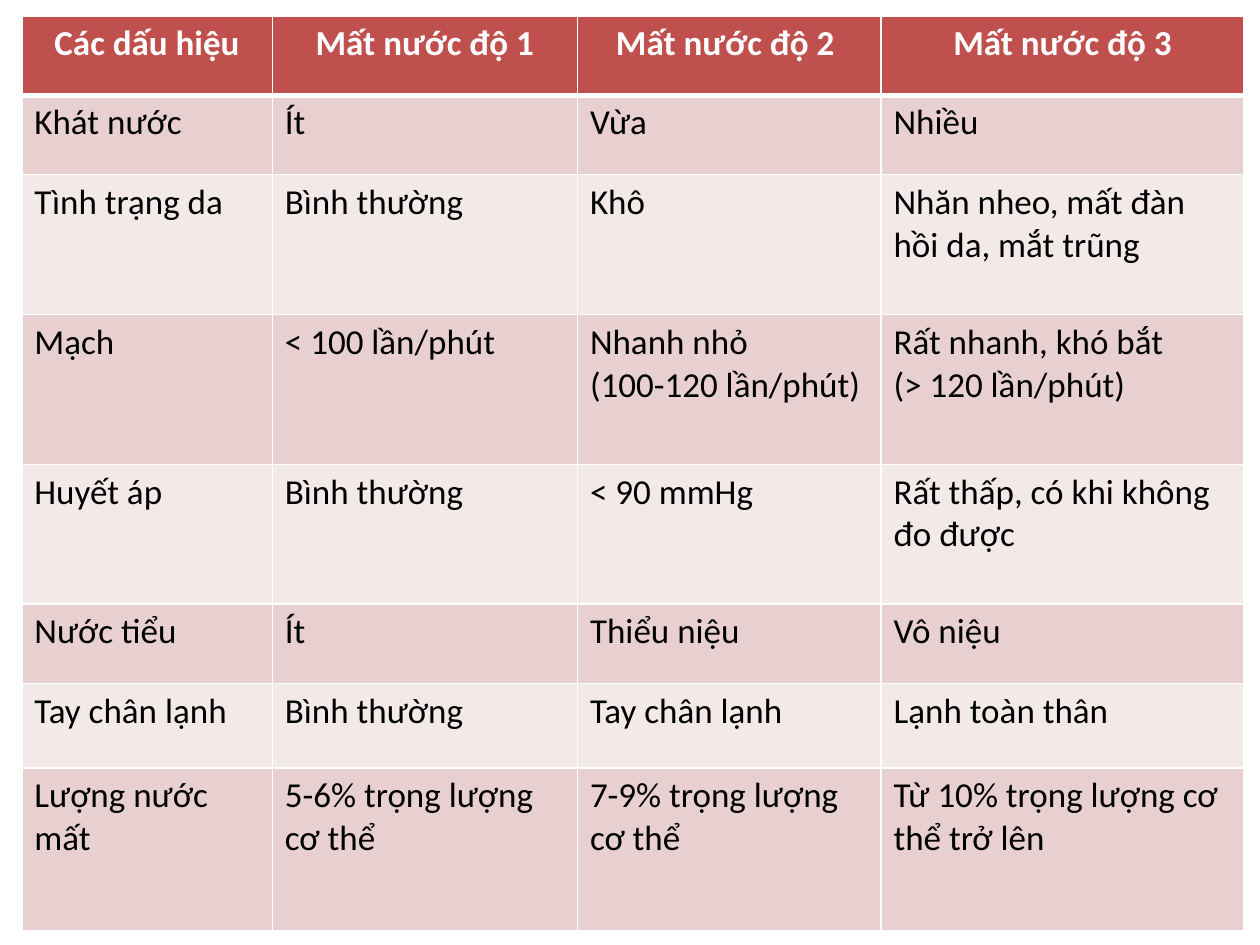
from pptx import Presentation
from pptx.dml.color import RGBColor
from pptx.enum.text import PP_ALIGN
from pptx.oxml.ns import qn
from pptx.util import Cm, Pt
from lxml.etree import SubElement

WHITE = RGBColor(0xFF, 0xFF, 0xFF)
BLACK = RGBColor(0x00, 0x00, 0x00)
HEADER_RED = RGBColor(0xC0, 0x50, 0x4D)
BANDS = (RGBColor(0xF4, 0xE9, 0xE9), RGBColor(0xE8, 0xD0, 0xD0))

COLUMN_WIDTHS = (5.05, 6.15, 6.12, 7.32)
ROW_HEIGHTS = (1.6, 1.6, 2.82, 3.02, 2.82, 1.6, 1.7, 3.28)
SIGNS = (
    ("Các dấu hiệu", "Mất nước độ 1", "Mất nước độ 2 ", "Mất nước độ 3"),
    ("Khát nước", "Ít", "Vừa", "Nhiều"),
    ("Tình trạng da", "Bình thường", "Khô", "Nhăn nheo, mất đàn hồi da, mắt trũng"),
    ("Mạch", "< 100 lần/phút", "Nhanh nhỏ\n(100-120 lần/phút)",
     "Rất nhanh, khó bắt\n(> 120 lần/phút)"),
    ("Huyết áp", "Bình thường", "< 90 mmHg", "Rất thấp, có khi không đo được"),
    ("Nước tiểu", "Ít", "Thiểu niệu", "Vô niệu"),
    ("Tay chân lạnh", "Bình thường", "Tay chân lạnh", "Lạnh toàn thân"),
    ("Lượng nước mất", "5-6% trọng lượng\ncơ thể", "7-9% trọng lượng\ncơ thể",
     "Từ 10% trọng lượng cơ thể trở lên"),
)


def set_borders(cell, top, bottom):
    """Draw white cell borders; side lines are always 1 pt."""
    properties = cell._tc.get_or_add_tcPr()
    for side, width in (("L", 1), ("R", 1), ("T", top), ("B", bottom)):
        line = SubElement(properties, qn(f"a:ln{side}"), w=str(Pt(width)))
        fill = SubElement(line, qn("a:solidFill"))
        SubElement(fill, qn("a:srgbClr"), val=str(WHITE))


def format_cell(cell, text, row):
    is_header = row == 0
    # The rule under the header is shared by the first two rows
    set_borders(cell, top=3 if row == 1 else 1, bottom=3 if is_header else 1)
    cell.fill.solid()
    cell.fill.fore_color.rgb = HEADER_RED if is_header else BANDS[row % 2]

    cell.text = text
    for para in cell.text_frame.paragraphs:
        para.alignment = PP_ALIGN.CENTER if is_header else PP_ALIGN.LEFT
        para.font.name = "Calibri"
        para.font.size = Pt(20)
        para.font.bold = is_header
        para.font.color.rgb = WHITE if is_header else BLACK


def add_signs_table(page, left, top):
    """Place the dehydration table with its top left corner at the given point."""
    frame = page.shapes.add_table(
        len(ROW_HEIGHTS), len(COLUMN_WIDTHS), left, top,
        Cm(sum(COLUMN_WIDTHS)), Cm(sum(ROW_HEIGHTS)))
    table = frame.table
    for column, width in zip(table.columns, COLUMN_WIDTHS):
        column.width = Cm(width)
    for row, height in zip(table.rows, ROW_HEIGHTS):
        row.height = Cm(height)
    for row, texts in enumerate(SIGNS):
        for column, text in enumerate(texts):
            format_cell(table.cell(row, column), text, row)


def main():
    deck = Presentation()
    deck.slide_width, deck.slide_height = Cm(25.4), Cm(19.05)
    page = deck.slides.add_slide(deck.slide_layouts[6])
    add_signs_table(page, Cm(0.44), Cm(0.32))
    deck.save("out.pptx")


if __name__ == "__main__":
    main()
